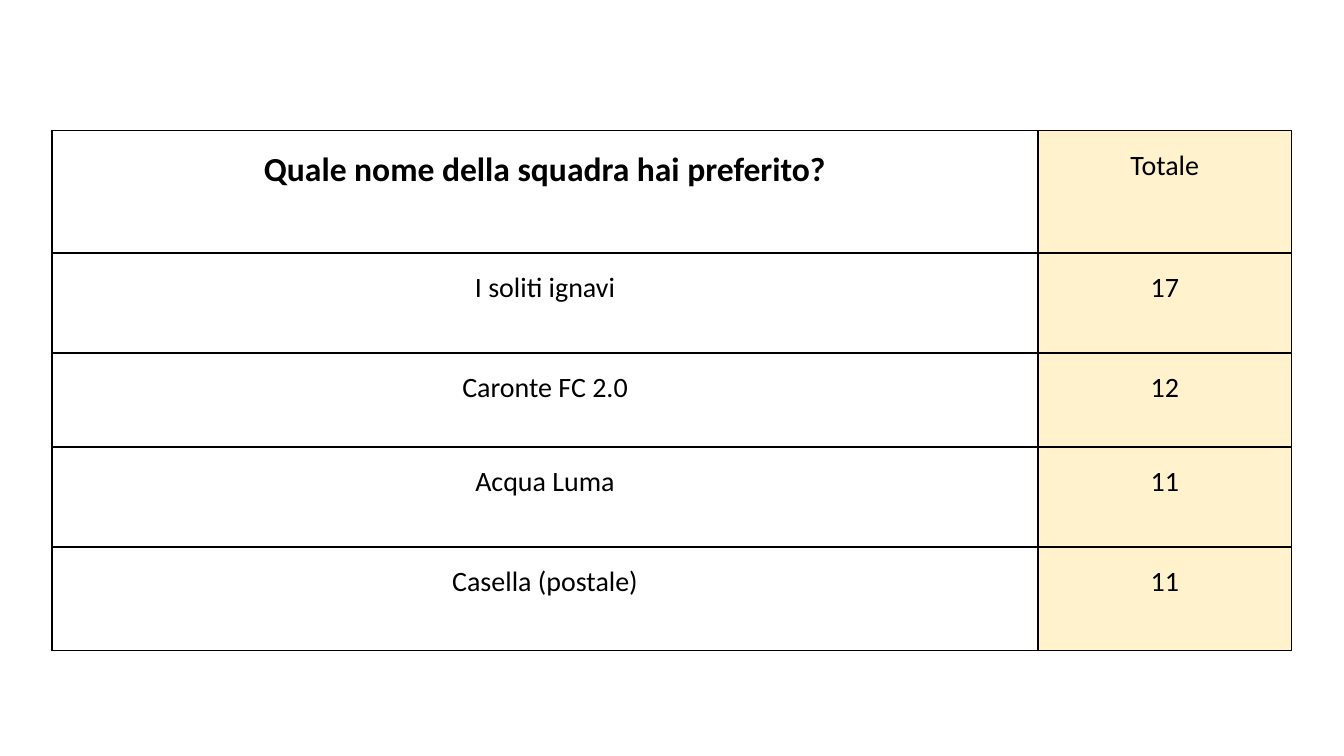
from dataclasses import dataclass

from lxml.etree import SubElement
from pptx import Presentation
from pptx.dml.color import RGBColor as RGB
from pptx.enum.text import PP_ALIGN as Align
from pptx.oxml.ns import qn
from pptx.util import Pt

PX = 6350


@dataclass(frozen=True)
class Theme:
    font: str = "Calibri"
    ink: str = "000000"
    paper: str = "FFFFFF"
    total: str = "FFF2CC"
    question_size: int = 18
    answer_size: int = 15
    space_before: int = 12
    line_spacing: float = 1.15
    border: int = 1


THEME = Theme()
POLL = [
    ("Quale nome della squadra hai preferito?", "Totale"),
    ("I soliti ignavi", "17"),
    ("Caronte FC 2.0", "12"),
    ("Acqua Luma", "11"),
    ("Casella (postale)", "11"),
]
COLUMN_WIDTHS = [1056, 272]
ROW_HEIGHTS = [131, 107, 101, 107, 111]


def px(length):
    return length * PX


def add_borders(cell):
    properties = cell._tc.get_or_add_tcPr()
    for position, side in enumerate(("lnL", "lnR", "lnT", "lnB")):
        border = SubElement(properties, qn(f"a:{side}"), w=str(Pt(THEME.border)))
        fill = SubElement(border, qn("a:solidFill"))
        SubElement(fill, qn("a:srgbClr"), val=THEME.ink)
        properties.insert(position, border)


def write_cell(cell, text, fill, size, bold):
    cell.margin_left = cell.margin_right = px(10)
    cell.margin_top = cell.margin_bottom = px(14)
    cell.text = text
    paragraph = cell.text_frame.paragraphs[0]
    paragraph.alignment = Align.CENTER
    paragraph.line_spacing = THEME.line_spacing
    paragraph.space_before = Pt(THEME.space_before)
    font = paragraph.font
    font.name, font.size, font.bold = THEME.font, Pt(size), bold
    font.color.rgb = RGB.from_string(THEME.ink)
    if fill:
        cell.fill.solid()
        cell.fill.fore_color.rgb = RGB.from_string(fill)
    else:
        cell.fill.background()
    add_borders(cell)


def add_poll(slide, left, top, width, height):
    poll = slide.shapes.add_table(
        len(POLL), len(COLUMN_WIDTHS), px(left), px(top), px(width), px(height)
    ).table
    poll.first_row = poll.horz_banding = False
    for column, share in zip(poll.columns, COLUMN_WIDTHS):
        column.width = px(round(share * width / sum(COLUMN_WIDTHS)))
    for row, share in zip(poll.rows, ROW_HEIGHTS):
        row.height = px(round(share * height / sum(ROW_HEIGHTS)))
    for index, (answer, total) in enumerate(POLL):
        is_question = index == 0
        size = THEME.question_size if is_question else THEME.answer_size
        write_cell(poll.cell(index, 0), answer, None, size, is_question)
        write_cell(poll.cell(index, 1), total, THEME.total, THEME.answer_size, False)


def main():
    deck = Presentation()
    deck.slide_width, deck.slide_height = px(1440), px(810)
    slide = deck.slides.add_slide(deck.slide_layouts[6])
    slide.background.fill.solid()
    slide.background.fill.fore_color.rgb = RGB.from_string(THEME.paper)
    add_poll(slide, 56, 140, sum(COLUMN_WIDTHS), sum(ROW_HEIGHTS))
    deck.save("out.pptx")


if __name__ == "__main__":
    main()
